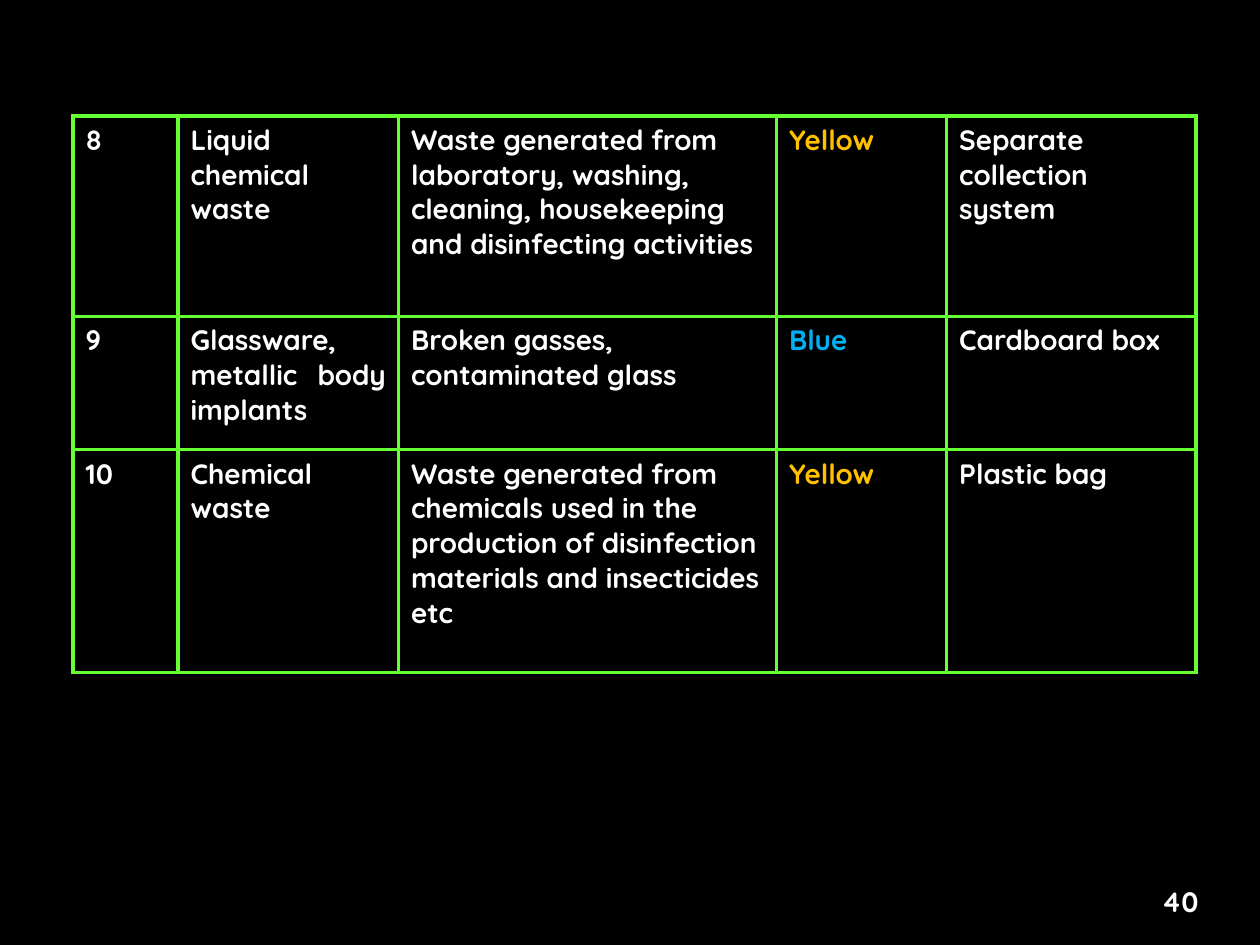
from typing import NamedTuple

from lxml import etree
from pptx import Presentation
from pptx.dml.color import RGBColor
from pptx.enum.text import MSO_ANCHOR, PP_ALIGN
from pptx.oxml.ns import qn
from pptx.util import Pt

LEFT, RIGHT, FULL = PP_ALIGN.LEFT, PP_ALIGN.RIGHT, PP_ALIGN.JUSTIFY
MIDDLE = MSO_ANCHOR.MIDDLE

FONT = "Quicksand"
WHITE, BLACK, GREEN = "FFFFFF", "000000", "66FF33"
BIN_HUES = {"Yellow": "FFC000", "Blue": "00B0F0"}

TABLE_X, TABLE_Y = 41.76, 66.24
WIDTHS = [60, 126, 216, 97.2, 142.56]
BORDER = 2.25


class Waste(NamedTuple):
    number: str
    kind: str
    detail: str
    bin: str
    holder: str


ROWS = [
    (114.48, Waste("8", "Liquid chemical waste",
                   "Waste generated from laboratory, washing, cleaning, "
                   "housekeeping and disinfecting activities",
                   "Yellow", "Separate collection system")),
    (76.32, Waste("9", "Glassware, metallic body implants",
                  "Broken gasses, contaminated glass",
                  "Blue", "Cardboard box")),
    (127.44, Waste("10", "Chemical waste",
                   "Waste generated from chemicals used in the production of "
                   "disinfection materials and insecticides etc",
                   "Yellow", "Plastic bag")),
]


def tint(code: str) -> RGBColor:
    return RGBColor.from_string(code)


def write(frame, text: str, *, color: str = WHITE, align=FULL, size: float = 16) -> None:
    frame.word_wrap = True
    para = frame.paragraphs[0]
    para.alignment = align
    run = para.add_run()
    run.text = text
    font = run.font
    font.name, font.size, font.bold = FONT, Pt(size), True
    font.color.rgb = tint(color)


def frame_cell(cell, color: str, width: float) -> None:
    """Draw a solid border on all four sides of a cell."""
    props = cell._tc.get_or_add_tcPr()
    for side in ("a:lnL", "a:lnR", "a:lnT", "a:lnB"):
        line = etree.SubElement(props, qn(side), w=str(Pt(width)))
        fill = etree.SubElement(line, qn("a:solidFill"))
        etree.SubElement(fill, qn("a:srgbClr"), val=color)


def add_grid(slide) -> None:
    heights = [height for height, _ in ROWS]
    table = slide.shapes.add_table(
        len(ROWS), len(WIDTHS), Pt(TABLE_X), Pt(TABLE_Y),
        Pt(sum(WIDTHS)), Pt(sum(heights))).table
    table.first_row = table.horz_banding = False
    for column, width in zip(table.columns, WIDTHS):
        column.width = Pt(width)
    for row, (height, waste) in zip(table.rows, ROWS):
        row.height = Pt(height)
        for cell, field, text in zip(row.cells, Waste._fields, waste):
            frame_cell(cell, GREEN, BORDER)
            cell.fill.background()
            write(cell.text_frame, text,
                  color=BIN_HUES[text] if field == "bin" else WHITE,
                  align=LEFT if field == "detail" else FULL)


def add_page(slide, number: str) -> None:
    box = slide.shapes.add_textbox(Pt(624.24), Pt(504), Pt(67.68), Pt(21.6))
    box.text_frame.vertical_anchor = MIDDLE
    write(box.text_frame, number, align=RIGHT)


def main() -> None:
    deck = Presentation()
    deck.slide_width, deck.slide_height = Pt(720), Pt(540)
    slide = deck.slides.add_slide(deck.slide_layouts[6])
    back = slide.background.fill
    back.solid()
    back.fore_color.rgb = tint(BLACK)
    add_page(slide, "40")
    add_grid(slide)
    deck.save("out.pptx")


if __name__ == "__main__":
    main()
